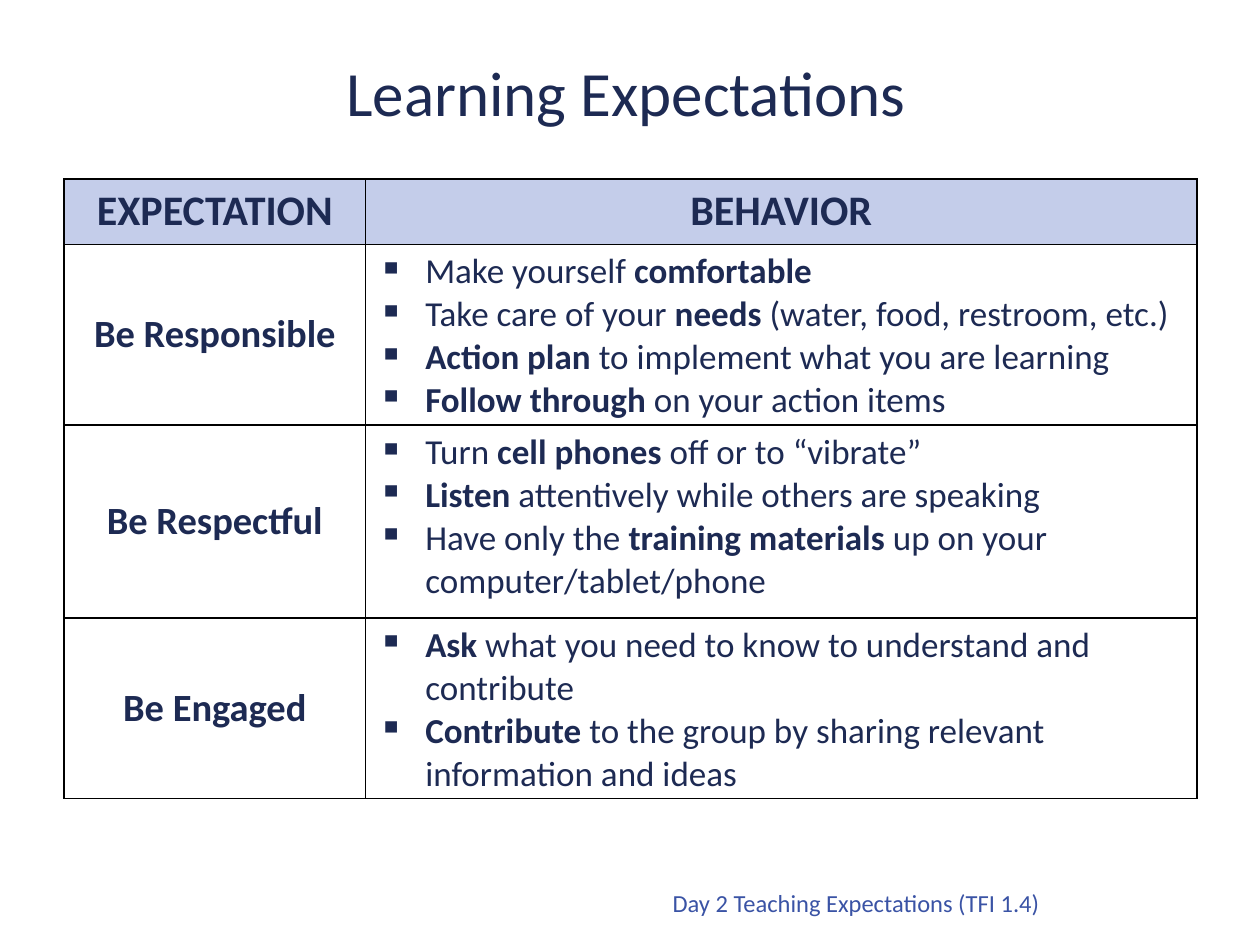
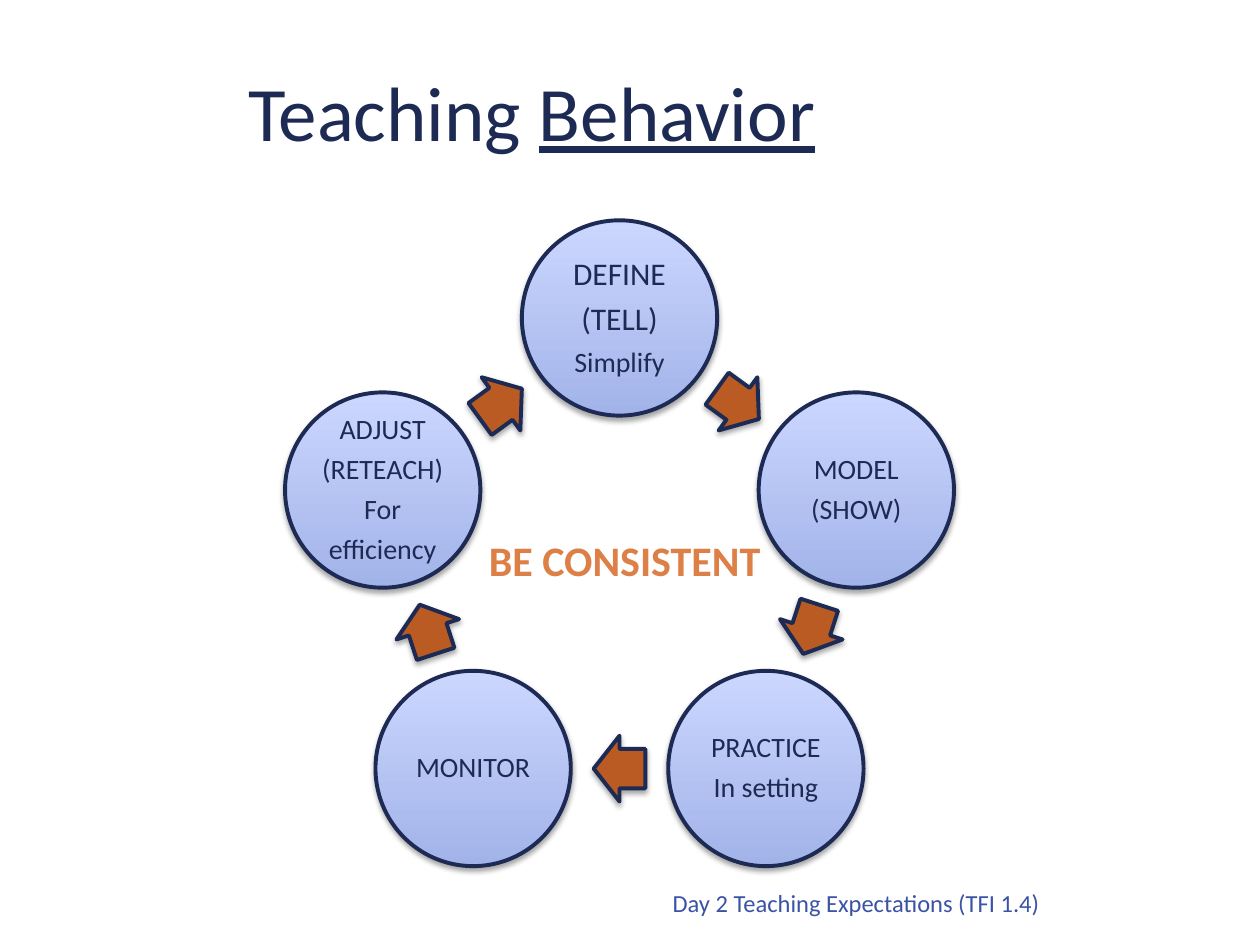
"""Build two slides: a table of learning expectations and a cycle for teaching behavior."""
import math

from lxml import etree
from pptx import Presentation
from pptx import util as u
from pptx.dml.color import RGBColor
from pptx.enum import shapes, text
from pptx.oxml import ns

COLORS = {
    "navy": "1D2A53",
    "footer": "3A53A5",
    "header": "C4CDEA",
    "white": "FFFFFF",
    "border": "000000",
    "circle_bottom": "A2B3E9",
    "circle_top": "CCD7FF",
    "arrow": "B95B22",
    "accent": "DD8047",
}
FONT = "Calibri"
CENTER = text.PP_ALIGN.CENTER
MIDDLE = text.MSO_ANCHOR.MIDDLE
BOLD = {"bold": True}
UNDERLINE = {"underline": True}
FOOTER = "Day 2 Teaching Expectations (TFI 1.4)"

COLUMN_WIDTHS = [172.1, 475.2]
ROW_HEIGHTS = [37.4, 98.6, 110.2, 98.6]
HEADINGS = ["EXPECTATION", "BEHAVIOR"]
EXPECTATIONS = {
    "Be Responsible": [
        "Make yourself *comfortable*",
        "Take care of your *needs* (water, food, restroom, etc.)",
        "*Action plan *to implement what you are learning",
        "*Follow through *on your action items",
    ],
    "Be Respectful": [
        "Turn *cell phones* off or to “vibrate”",
        "*Listen *attentively while others are speaking",
        "Have only the *training materials *up on your computer/tablet/phone",
    ],
    "Be Engaged": [
        "*Ask* what you need to know to understand and contribute",
        "*Contribute *to the group by sharing relevant information and ideas",
    ],
}

CYCLE_CENTER = (354, 324)
CIRCLE_ORBIT, CIRCLE_SIZE = 142.3, 111.6
ARROW_ORBIT, ARROW_SIZE = 115.2, (29.5, 37.6)
STEPS = [
    [("DEFINE", 18), ("(TELL)", 18), ("Simplify", 16)],
    [("MODEL", 16), ("(SHOW)", 16)],
    [("PRACTICE", 16), ("In setting", 16)],
    [("MONITOR", 16)],
    [("ADJUST", 16), ("(RETEACH)", 16), ("For", 16), ("efficiency", 16)],
]


def rgb(name):
    """Return the named colour."""
    return RGBColor.from_string(COLORS[name])


def apply_format(target, values):
    """Set each attribute of the target from a dict."""
    for name, value in values.items():
        setattr(target, name, value)


def add_child(parent, tag, **attributes):
    """Append a DrawingML element."""
    return etree.SubElement(parent, ns.qn(tag), attributes)


def add_color(parent, name):
    """Append an RGB colour element and return it."""
    return add_child(parent, "a:srgbClr", val=COLORS[name])


def write_paragraph(paragraph, content, size, color="navy", emphasis=BOLD, **layout):
    """Write text, giving the parts between asterisks the emphasis."""
    apply_format(paragraph, layout)
    for index, part in enumerate(content.split("*")):
        if part:
            run = paragraph.add_run()
            run.text = part
            apply_format(run.font, {"name": FONT, "size": u.Pt(size)})
            run.font.color.rgb = rgb(color)
            if index % 2:
                apply_format(run.font, emphasis)


def paragraphs_for(frame, items):
    """Pair each item with a paragraph of the frame."""
    for index, item in enumerate(items):
        yield (frame.add_paragraph() if index else frame.paragraphs[0]), item


def add_text(slide, box, content, size, anchor=text.MSO_ANCHOR.TOP, **style):
    """Add a text box with one paragraph."""
    frame = slide.shapes.add_textbox(*map(u.Pt, box)).text_frame
    apply_format(frame, {"word_wrap": True, "vertical_anchor": anchor})
    write_paragraph(frame.paragraphs[0], content, size, **style)


def add_title(slide, box, content, size):
    """Add a centred slide title."""
    add_text(slide, box, content, size, MIDDLE, emphasis=UNDERLINE, alignment=CENTER)


def add_slide(presentation):
    """Add a blank slide with the shared footer."""
    slide = presentation.slides.add_slide(presentation.slide_layouts[6])
    add_text(slide, (261.4, 481.7, 339.8, 46.1), FOOTER, 14, text.MSO_ANCHOR.BOTTOM,
             color="footer", alignment=text.PP_ALIGN.RIGHT)
    return slide


def add_bullet(paragraph):
    """Give the paragraph a square bullet and a hanging indent."""
    properties = paragraph._p.get_or_add_pPr()
    properties.set("marL", str(u.Pt(27)))
    properties.set("indent", str(u.Pt(-27)))
    add_color(add_child(properties, "a:buClr"), "navy")
    add_child(properties, "a:buChar", char="▪")


def format_cell(cell, fill, anchor):
    """Set the borders, fill and anchor of a table cell."""
    properties = cell._tc.get_or_add_tcPr()
    for side in ("a:lnL", "a:lnR", "a:lnT", "a:lnB"):
        border = add_child(properties, side, w=str(u.Pt(1)))
        add_color(add_child(border, "a:solidFill"), "border")
    cell.fill.solid()
    cell.fill.fore_color.rgb = rgb(fill)
    cell.vertical_anchor = anchor


def add_expectations_table(slide):
    """Add the table of expectations and behaviors."""
    box = (36.7, 102.2, sum(COLUMN_WIDTHS), sum(ROW_HEIGHTS))
    table = slide.shapes.add_table(len(ROW_HEIGHTS), len(COLUMN_WIDTHS), *map(u.Pt, box)).table
    apply_format(table, {"first_row": False, "horz_banding": False})
    for column, width in zip(table.columns, COLUMN_WIDTHS):
        column.width = u.Pt(width)
    for row, height in zip(table.rows, ROW_HEIGHTS):
        row.height = u.Pt(height)
    for index, heading in enumerate(HEADINGS):
        cell = table.cell(0, index)
        format_cell(cell, "header", text.MSO_ANCHOR.TOP)
        write_paragraph(cell.text_frame.paragraphs[0], f"*{heading}*", 24, alignment=CENTER)
    for index, (expectation, behaviors) in enumerate(EXPECTATIONS.items(), start=1):
        label, details = table.cell(index, 0), table.cell(index, 1)
        format_cell(label, "white", MIDDLE)
        write_paragraph(label.text_frame.paragraphs[0], f"*{expectation}*", 22, alignment=CENTER)
        format_cell(details, "white", text.MSO_ANCHOR.TOP)
        for paragraph, behavior in paragraphs_for(details.text_frame, behaviors):
            add_bullet(paragraph)
            write_paragraph(paragraph, behavior, 20)


def add_cycle_shape(slide, kind, angle, orbit, width, height):
    """Add an outlined, shadowed shape centred on an orbit, at degrees clockwise from the top."""
    x = CYCLE_CENTER[0] + orbit * math.sin(math.radians(angle))
    y = CYCLE_CENTER[1] - orbit * math.cos(math.radians(angle))
    box = (x - width / 2, y - height / 2, width, height)
    shape = slide.shapes.add_shape(kind, *map(u.Pt, box))
    shape.line.color.rgb = rgb("navy")
    shape.line.width = u.Pt(2.25)
    shape.shadow.inherit = False
    effects = shape._element.spPr.find(ns.qn("a:effectLst"))
    shadow = add_child(effects, "a:outerShdw", blurRad=str(u.Pt(3.1)), dist=str(u.Pt(1.8)),
                       dir="5400000", rotWithShape="0")
    add_child(add_color(shadow, "border"), "a:alpha", val="35000")
    return shape


def add_step(slide, angle, lines):
    """Add a gradient circle with the lines of one step."""
    circle = add_cycle_shape(slide, shapes.MSO_SHAPE.OVAL, angle, CIRCLE_ORBIT,
                             CIRCLE_SIZE, CIRCLE_SIZE)
    circle.fill.gradient()
    circle.fill.gradient_angle = 90
    for stop, color in zip(circle.fill.gradient_stops, ("circle_bottom", "circle_top")):
        stop.color.rgb = rgb(color)
    frame = circle.text_frame
    margins = ("margin_left", "margin_right", "margin_top", "margin_bottom")
    apply_format(frame, dict.fromkeys(margins, u.Pt(1.8)))
    apply_format(frame, {"word_wrap": True, "vertical_anchor": MIDDLE})
    for paragraph, (line, size) in paragraphs_for(frame, lines):
        write_paragraph(paragraph, line, size, alignment=CENTER, line_spacing=0.9,
                        space_after=u.Pt(size * 0.35))


def add_arrow(slide, angle):
    """Add an arrow that points clockwise along the cycle."""
    arrow = add_cycle_shape(slide, shapes.MSO_SHAPE.RIGHT_ARROW, angle, ARROW_ORBIT, *ARROW_SIZE)
    arrow.rotation = angle
    arrow.adjustments[0], arrow.adjustments[1] = 0.6, 0.5
    arrow.fill.solid()
    arrow.fill.fore_color.rgb = rgb("arrow")


def add_cycle(slide):
    """Add the steps evenly around the cycle, each followed by an arrow."""
    turn = 360 / len(STEPS)
    for index, lines in enumerate(STEPS):
        add_step(slide, index * turn, lines)
        add_arrow(slide, (index + 0.5) * turn)


def main():
    """Build and save the presentation."""
    presentation = Presentation()
    apply_format(presentation, {"slide_width": u.Pt(720), "slide_height": u.Pt(540)})

    expectations = add_slide(presentation)
    add_title(expectations, (36.7, 27.4, 642.2, 49), "Learning Expectations", 36)
    add_expectations_table(expectations)

    teaching = add_slide(presentation)
    add_text(teaching, (272.2, 301.7, 200.9, 58.3), "*BE CONSISTENT*", 24, color="accent")
    add_cycle(teaching)
    add_title(teaching, (28.8, 27.4, 550.1, 72), "Teaching *Behavior*", 44)

    presentation.save("out.pptx")


if __name__ == "__main__":
    main()
